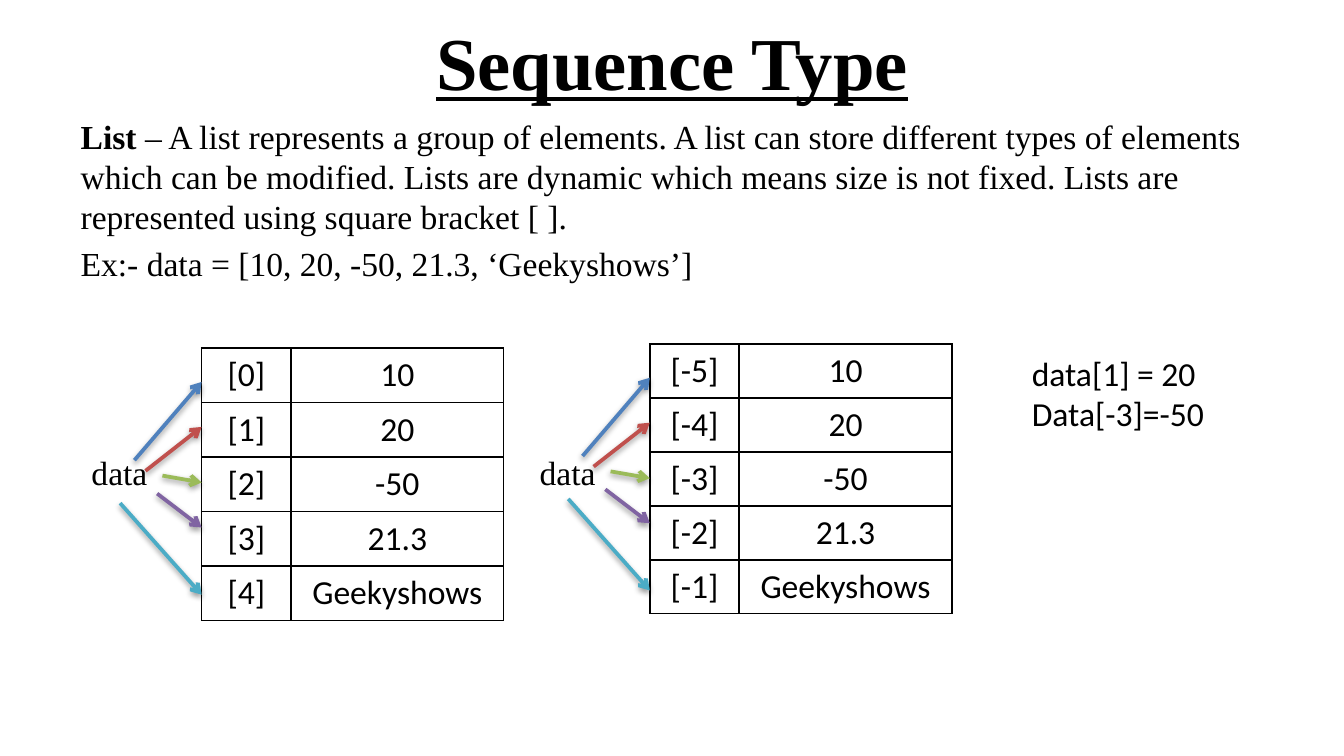
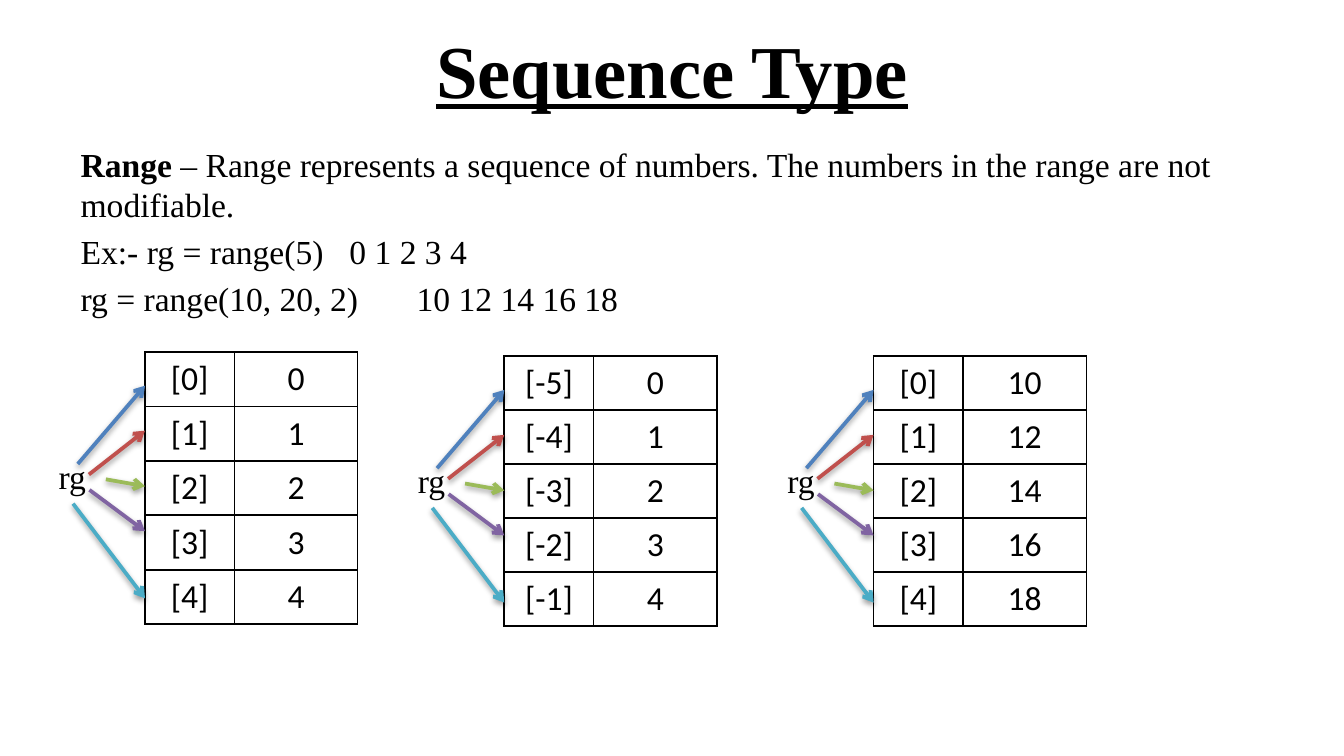
from lxml.etree import SubElement
from pptx import Presentation
from pptx.dml.color import RGBColor
from pptx.enum.shapes import MSO_CONNECTOR
from pptx.enum.text import MSO_ANCHOR, MSO_AUTO_SIZE, PP_ALIGN
from pptx.oxml import parse_xml
from pptx.oxml.ns import nsdecls, qn
from pptx.util import Cm, Pt

# Shared style
BLACK = RGBColor(0x00, 0x00, 0x00)
ARROW_COLORS = [
    RGBColor(0x4F, 0x81, 0xBD),
    RGBColor(0xC0, 0x50, 0x4D),
    RGBColor(0x9B, 0xBB, 0x59),
    RGBColor(0x80, 0x64, 0xA2),
    RGBColor(0x4B, 0xAC, 0xC6),
]
SERIF = "Times New Roman"
SANS = "Calibri"
TEXT_SIZE = 18

# Shared geometry in centimetres
MARGIN = 1.27
CONTENT_WIDTH = 22.86
TITLE_HEIGHT = 2.39
INDEX_WIDTH = 1.69
ROW_HEIGHT = 1.02
RESULT_TAB = 7.62

# Arrow points, measured from the top left corner of the table
UPPER_STARTS = [(-1.27, 2.12), (-1.06, 2.32), (-0.74, 2.41)]
DATA_STARTS = UPPER_STARTS + [(-0.84, 2.75), (-1.54, 2.93)]
RG_STARTS = UPPER_STARTS + [(-1.05, 2.61), (-1.36, 2.87)]
ARROW_ENDS = [0.64, 1.49, 2.54, 3.39, 4.66]

POSITIVE = [f"[{index}]" for index in range(5)]
NEGATIVE = [f"[{index}]" for index in range(-5, 0)]


def format_paragraph(paragraph, font_name=SERIF, size=TEXT_SIZE):
    for run in paragraph.runs:
        run.font.name = font_name
        run.font.size = Pt(size)
        run.font.color.rgb = BLACK


def place(shape, left, top, width, height):
    shape.left, shape.top = Cm(left), Cm(top)
    shape.width, shape.height = Cm(width), Cm(height)


def add_title(slide, top):
    title = slide.shapes.title
    place(title, MARGIN, top, CONTENT_WIDTH, TITLE_HEIGHT)
    text_frame = title.text_frame
    text_frame.text = "Sequence Type"
    text_frame.vertical_anchor = MSO_ANCHOR.MIDDLE
    text_frame.auto_size = MSO_AUTO_SIZE.NONE
    paragraph = text_frame.paragraphs[0]
    paragraph.alignment = PP_ALIGN.CENTER
    format_paragraph(paragraph, size=40)
    paragraph.runs[0].font.bold = True
    paragraph.runs[0].font.underline = True


def remove_bullet(paragraph):
    properties = paragraph._p.get_or_add_pPr()
    properties.set("marL", "0")
    properties.set("indent", "0")
    SubElement(properties, qn("a:buNone"))
    tab_list = SubElement(properties, qn("a:tabLst"))
    SubElement(tab_list, qn("a:tab"), pos=str(Cm(RESULT_TAB)), algn="l")


def add_body(slide, top, height, term, definition, examples):
    body = slide.placeholders[1]
    place(body, MARGIN, top, CONTENT_WIDTH, height)
    text_frame = body.text_frame
    text_frame.text = "\n".join([term] + examples)
    text_frame.auto_size = MSO_AUTO_SIZE.NONE
    first = text_frame.paragraphs[0]
    first.runs[0].font.bold = True
    first.add_run().text = f" – {definition}"
    for paragraph in text_frame.paragraphs:
        remove_bullet(paragraph)
        format_paragraph(paragraph)
    first.space_before = Pt(0)


def add_label(slide, left, top, width, height, text, font_name=SERIF):
    label = slide.shapes.add_textbox(Cm(left), Cm(top), Cm(width), Cm(height))
    text_frame = label.text_frame
    text_frame.text = text
    text_frame.word_wrap = False
    text_frame.auto_size = MSO_AUTO_SIZE.SHAPE_TO_FIT_TEXT
    for paragraph in text_frame.paragraphs:
        format_paragraph(paragraph, font_name)


def fill_cell(cell, text):
    cell.text = text
    paragraph = cell.text_frame.paragraphs[0]
    paragraph.alignment = PP_ALIGN.CENTER
    format_paragraph(paragraph, SANS)
    properties = cell._tc.get_or_add_tcPr()
    for side in ("lnL", "lnR", "lnT", "lnB"):
        properties.append(parse_xml(
            f'<a:{side} {nsdecls("a")} w="{Pt(1)}"><a:solidFill>'
            f'<a:srgbClr val="{BLACK}"/></a:solidFill></a:{side}>'))
    cell.fill.background()


def add_index_table(slide, left, top, value_width, indexes, values):
    table = slide.shapes.add_table(
        len(values), 2, Cm(left), Cm(top),
        Cm(INDEX_WIDTH + value_width), Cm(ROW_HEIGHT * len(values))).table
    table.first_row = False
    table.horz_banding = False
    table.columns[0].width = Cm(INDEX_WIDTH)
    table.columns[1].width = Cm(value_width)
    for row, texts in enumerate(zip(indexes, values)):
        table.rows[row].height = Cm(ROW_HEIGHT)
        for column, text in enumerate(texts):
            fill_cell(table.cell(row, column), text)


def add_arrow(slide, start, end, color):
    arrow = slide.shapes.add_connector(
        MSO_CONNECTOR.STRAIGHT, *[Cm(value) for value in start + end])
    arrow.line.color.rgb = color
    arrow.line.width = Pt(2)
    SubElement(arrow.line._get_or_add_ln(), qn("a:tailEnd"), type="arrow")
    arrow._element.spPr.append(parse_xml(
        f'<a:effectLst {nsdecls("a")}>'
        '<a:outerShdw blurRad="40000" dist="20000" dir="5400000" rotWithShape="0">'
        f'<a:srgbClr val="{BLACK}"><a:alpha val="38000"/></a:srgbClr>'
        '</a:outerShdw></a:effectLst>'))


def add_arrows(slide, left, top, starts):
    for (x, y), end_y, color in zip(starts, ARROW_ENDS, ARROW_COLORS):
        add_arrow(slide, (left + x, top + y), (left, top + end_y), color)


def add_data_figure(slide, left, top, indexes):
    values = ["10", "20", "-50", "21.3", "Geekyshows"]
    add_index_table(slide, left, top, 4.02, indexes, values)
    add_label(slide, left - 2.33, 8.41, 1.57, 1.02, "data")
    add_arrows(slide, left, top, DATA_STARTS)


def add_range_figure(slide, left, top, indexes, numbers):
    add_index_table(slide, left, top, 2.33, indexes, [str(number) for number in numbers])
    add_label(slide, left - 1.88, top + 1.84, 1.04, 1.02, "rg")
    add_arrows(slide, left, top, RG_STARTS)


def build_list_slide(slide):
    add_title(slide, -0.05)
    add_body(
        slide, 2.06, 3.81, "List",
        "A list represents a group of elements. A list can store different types "
        "of elements which can be modified. Lists are dynamic which means size is "
        "not fixed. Lists are represented using square bracket [ ].",
        ["Ex:- data = [10, 20, -50, 21.3, ‘Geekyshows’]"])
    add_data_figure(slide, 3.81, 6.58, POSITIVE)
    add_data_figure(slide, 12.28, 6.5, NEGATIVE)
    add_label(slide, 19.25, 6.55, 3.81, 1.8, "data[1] = 20\nData[-3]=-50", SANS)


def build_range_slide(slide):
    add_title(slide, 0.1)
    add_body(
        slide, 2.59, 3.94, "Range",
        "Range represents a sequence of numbers. The numbers in the range are not "
        "modifiable.",
        ["Ex:- rg = range(5)\t0 1 2 3 4", "rg = range(10, 20, 2)\t10 12 14 16 18"])
    add_range_figure(slide, 2.74, 6.65, POSITIVE, range(5))
    add_range_figure(slide, 9.53, 6.73, NEGATIVE, range(5))
    add_range_figure(slide, 16.51, 6.73, POSITIVE, range(10, 20, 2))


def main():
    presentation = Presentation()
    presentation.slide_width = Cm(25.4)
    presentation.slide_height = Cm(14.29)
    layout = presentation.slide_layouts[1]
    build_list_slide(presentation.slides.add_slide(layout))
    build_range_slide(presentation.slides.add_slide(layout))
    presentation.save("out.pptx")


if __name__ == "__main__":
    main()
